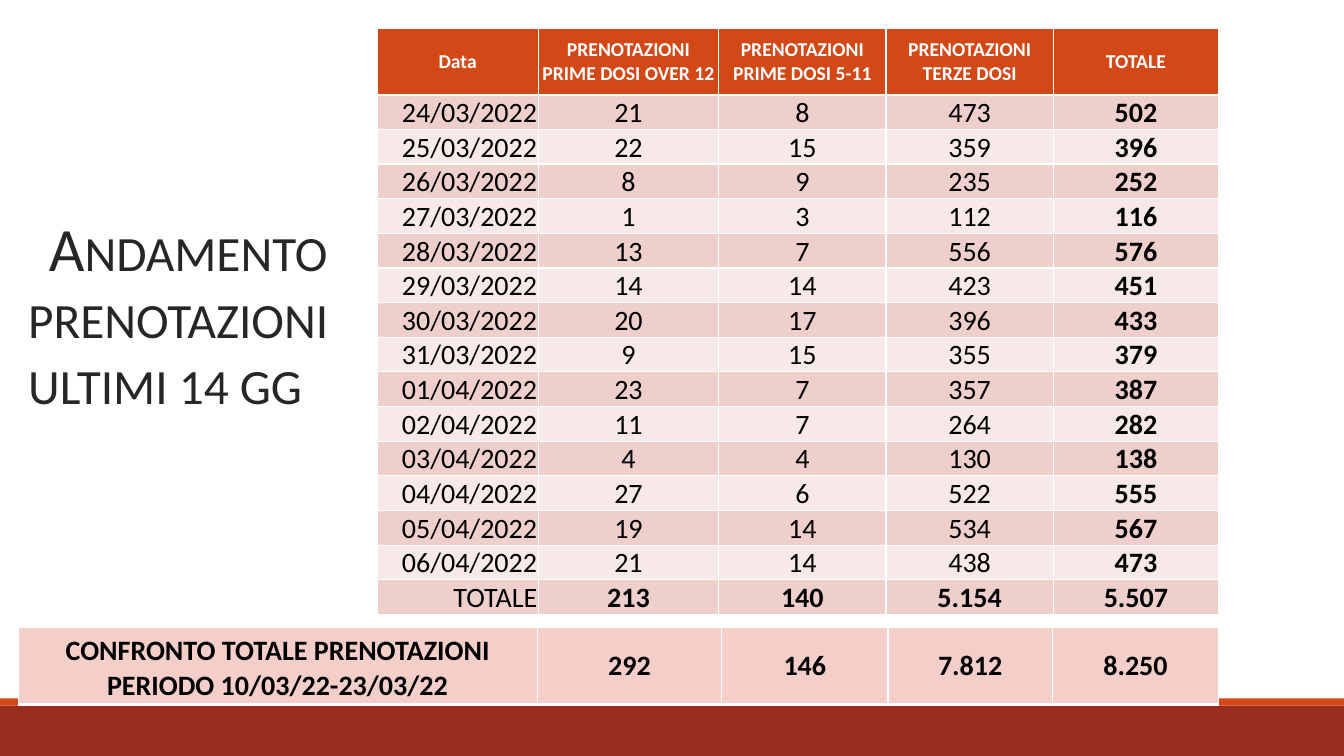
from dataclasses import dataclass

from lxml.etree import SubElement
from pptx import Presentation
from pptx.dml.color import RGBColor
from pptx.enum.shapes import MSO_SHAPE
from pptx.enum.text import MSO_ANCHOR, PP_ALIGN
from pptx.oxml import parse_xml
from pptx.oxml.ns import nsdecls, qn
from pptx.slide import Slide
from pptx.table import _Cell as Cell
from pptx.text.text import _Paragraph as Paragraph
from pptx.util import Inches, Pt

GRID_COLUMNS, GRID_ROWS = 133.33, 75
UNIT = Inches(0.1)
FONT = "Calibri"

WHITE = RGBColor(0xFF, 0xFF, 0xFF)
BLACK = RGBColor(0x00, 0x00, 0x00)
CHARCOAL = RGBColor(0x26, 0x26, 0x26)
ORANGE = RGBColor(0xD3, 0x48, 0x17)
BRICK = RGBColor(0x9B, 0x2D, 0x1F)
PINK = RGBColor(0xEF, 0xCF, 0xCC)
PALE_PINK = RGBColor(0xF7, 0xE9, 0xE7)
COMPARISON_PINK = RGBColor(0xF4, 0xCE, 0xC9)


@dataclass(frozen=True)
class Area:
    column: float
    row: float
    columns: float
    rows: float

    def box(self) -> tuple[int, int, int, int]:
        return grid(self.column), grid(self.row), grid(self.columns), grid(self.rows)


@dataclass(frozen=True)
class Band:
    area: Area
    color: RGBColor


@dataclass(frozen=True)
class CellStyle:
    fill: RGBColor
    color: RGBColor = BLACK
    size: float = 20
    bold: bool = False
    align: PP_ALIGN = PP_ALIGN.CENTER
    padding: float = 0.1
    bottom_line: float = 1


@dataclass(frozen=True)
class TableRow:
    height: float
    texts: tuple[str, ...]
    styles: tuple[CellStyle, ...]


BANDS = (
    Band(Area(0, 70, GRID_COLUMNS, 5), BRICK),
    Band(Area(0, 69.3, GRID_COLUMNS, 0.7), ORANGE),
)
TITLE_AREA = Area(1.8, 21.2, 32.8, 39.5)

BOOKING_COLUMNS = (16, 17.9, 16.6, 16.6, 16.4)
COMPARISON_COLUMNS = (51.5, 18.3, 16.5, 16.3, 16.5)

HEADINGS = (
    "Data",
    "PRENOTAZIONI PRIME DOSI OVER 12",
    "PRENOTAZIONI PRIME DOSI 5-11",
    "PRENOTAZIONI TERZE DOSI",
    "TOTALE",
)
BOOKINGS = (
    ("24/03/2022", "21", "8", "473", "502"),
    ("25/03/2022", "22", "15", "359", "396"),
    ("26/03/2022", "8", "9", "235", "252"),
    ("27/03/2022", "1", "3", "112", "116"),
    ("28/03/2022", "13", "7", "556", "576"),
    ("29/03/2022", "14", "14", "423", "451"),
    ("30/03/2022", "20", "17", "396", "433"),
    ("31/03/2022", "9", "15", "355", "379"),
    ("01/04/2022", "23", "7", "357", "387"),
    ("02/04/2022", "11", "7", "264", "282"),
    ("03/04/2022", "4", "4", "130", "138"),
    ("04/04/2022", "27", "6", "522", "555"),
    ("05/04/2022", "19", "14", "534", "567"),
    ("06/04/2022", "21", "14", "438", "473"),
    ("TOTALE", "213", "140", "5.154", "5.507"),
)
COMPARISON = (
    "CONFRONTO TOTALE PRENOTAZIONI PERIODO 10/03/22-23/03/22",
    "292", "146", "7.812", "8.250",
)


def grid(units: float) -> int:
    return round(units * UNIT)


def format_runs(paragraph: Paragraph, size: float, color: RGBColor, bold: bool = False) -> None:
    for run in paragraph.runs:
        run.font.name = FONT
        run.font.size = Pt(size)
        run.font.bold = bold
        run.font.color.rgb = color


def draw_band(slide: Slide, band: Band) -> None:
    shape = slide.shapes.add_shape(MSO_SHAPE.RECTANGLE, *band.area.box())
    shape.shadow.inherit = False
    shape.fill.solid()
    shape.fill.fore_color.rgb = band.color
    shape.line.fill.background()


def draw_title(slide: Slide, text: str) -> None:
    text_frame = slide.shapes.add_textbox(*TITLE_AREA.box()).text_frame
    text_frame.word_wrap = True
    text_frame.margin_left = text_frame.margin_right = 0
    text_frame.text = text
    paragraph = text_frame.paragraphs[0]
    paragraph.line_spacing = 0.9
    paragraph.space_before, paragraph.space_after = Pt(12), Pt(2)
    format_runs(paragraph, 44, CHARCOAL)
    paragraph.runs[0].font._element.set("cap", "small")
    properties = paragraph._p.get_or_add_pPr()
    properties.set("marL", str(grid(1)))
    properties.set("indent", str(grid(-1)))
    SubElement(properties, qn("a:buChar")).set("char", " ")


def draw_borders(cell: Cell, bottom_line: float) -> None:
    properties = cell._tc.get_or_add_tcPr()
    widths = {"lnL": 1, "lnR": 1, "lnT": 1, "lnB": bottom_line}
    for position, (side, width) in enumerate(widths.items()):
        properties.insert(position, parse_xml(
            f'<a:{side} {nsdecls("a")} w="{Pt(width)}"><a:solidFill>'
            f'<a:srgbClr val="{WHITE}"/></a:solidFill></a:{side}>'
        ))


def fill_cell(cell: Cell, text: str, style: CellStyle) -> None:
    cell.fill.solid()
    cell.fill.fore_color.rgb = style.fill
    cell.vertical_anchor = MSO_ANCHOR.MIDDLE
    cell.margin_left = cell.margin_right = cell.margin_top = grid(style.padding)
    cell.margin_bottom = 0
    cell.text_frame.text = text
    paragraph = cell.text_frame.paragraphs[0]
    paragraph.alignment = style.align
    format_runs(paragraph, style.size, style.color, style.bold)
    draw_borders(cell, style.bottom_line)


def draw_table(slide: Slide, column: float, row: float,
               widths: tuple[float, ...], rows: list[TableRow]) -> None:
    area = Area(column, row, sum(widths), sum(entry.height for entry in rows))
    table = slide.shapes.add_table(len(rows), len(widths), *area.box()).table
    table.first_row = table.horz_banding = False
    for table_column, width in zip(table.columns, widths):
        table_column.width = grid(width)
    for table_row, entry in zip(table.rows, rows):
        table_row.height = grid(entry.height)
        for cell, text, style in zip(table_row.cells, entry.texts, entry.styles):
            fill_cell(cell, text, style)


def booking_rows() -> list[TableRow]:
    heading = CellStyle(ORANGE, WHITE, 14, True, bottom_line=1.5)
    rows = [TableRow(6.6, HEADINGS, (heading,) * len(HEADINGS))]
    for index, texts in enumerate(BOOKINGS):
        fill = PALE_PINK if index % 2 else PINK
        date = CellStyle(fill, align=PP_ALIGN.RIGHT)
        count = CellStyle(fill, bold=texts[0] == "TOTALE")
        total = CellStyle(fill, bold=True)
        rows.append(TableRow(3.4, texts, (date, count, count, count, total)))
    return rows


def comparison_row() -> TableRow:
    label = CellStyle(COMPARISON_PINK, bold=True, padding=0.5, bottom_line=3)
    count = CellStyle(COMPARISON_PINK, bold=True, bottom_line=3)
    return TableRow(7.7, COMPARISON, (label,) + (count,) * 4)


def main() -> None:
    presentation = Presentation()
    presentation.slide_width = grid(GRID_COLUMNS)
    presentation.slide_height = grid(GRID_ROWS)
    slide = presentation.slides.add_slide(presentation.slide_layouts[6])
    for band in BANDS:
        draw_band(slide, band)
    draw_title(slide, "Andamento prenotazioni ultimi 14 gg")
    draw_table(slide, 37.4, 2.8, BOOKING_COLUMNS, booking_rows())
    draw_table(slide, 1.8, 62.2, COMPARISON_COLUMNS, [comparison_row()])
    presentation.save("out.pptx")


if __name__ == "__main__":
    main()
